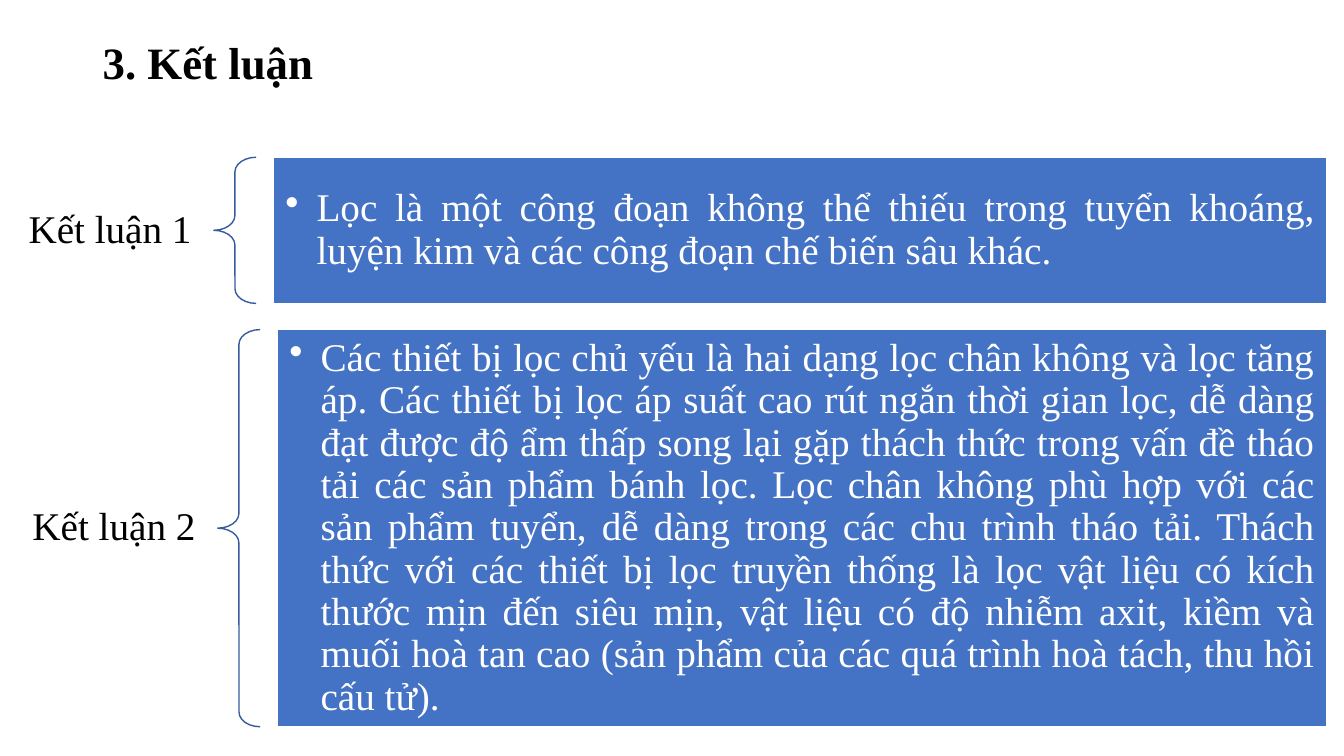
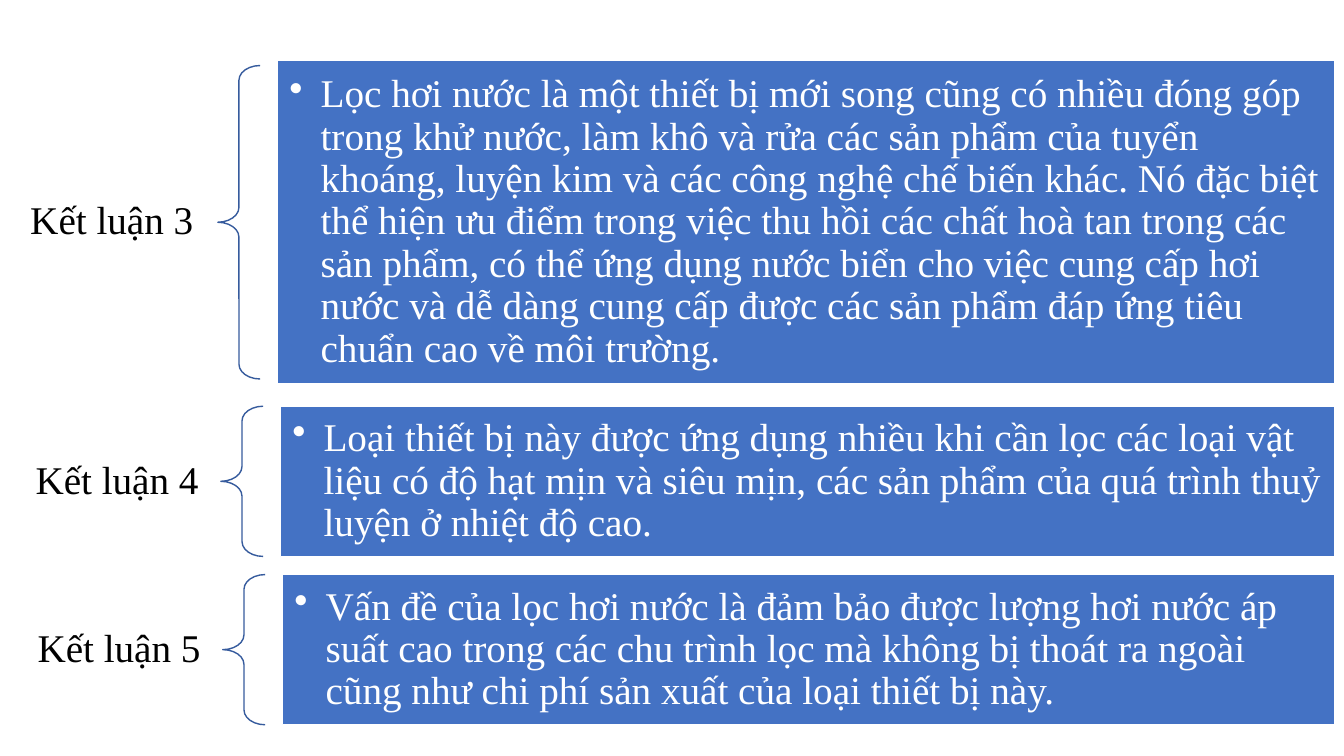
from dataclasses import dataclass
from typing import Optional

from lxml.etree import SubElement
from pptx import Presentation
from pptx.dml.color import RGBColor
from pptx.enum.shapes import MSO_SHAPE
from pptx.enum.text import MSO_ANCHOR, PP_ALIGN
from pptx.oxml.ns import qn
from pptx.util import Inches, Pt


@dataclass(frozen=True)
class Theme:
    font: str = "Times New Roman"
    title_size: int = 32
    body_size: int = 28
    ink: RGBColor = RGBColor(0x00, 0x00, 0x00)
    paper: RGBColor = RGBColor(0xFF, 0xFF, 0xFF)
    panel: RGBColor = RGBColor(0x44, 0x72, 0xC4)
    brace: RGBColor = RGBColor(0x36, 0x5B, 0x9D)
    line_width: float = 1
    line_spacing: float = 0.9


@dataclass(frozen=True)
class Conclusion:
    number: int
    text: str
    brace_left: float
    top: float
    height: float
    label_height: float
    brace_inset: float = 0
    label_align: PP_ALIGN = PP_ALIGN.RIGHT


@dataclass(frozen=True)
class Page:
    conclusions: tuple[Conclusion, ...]
    label_left: float
    panel_right: float
    panel_align: PP_ALIGN
    title: Optional[str] = None


THEME = Theme()
BRACE_WIDTH = 0.42
BRACE_TO_PANEL = 0.59
BULLET_INDENT = 0.31

PAGES = (
    Page(
        title="3. Kết luận",
        label_left=0,
        panel_right=13.16,
        panel_align=PP_ALIGN.JUSTIFY,
        conclusions=(
            Conclusion(
                1,
                "Lọc là một công đoạn không thể thiếu trong tuyển khoáng, luyện kim "
                "và các công đoạn chế biến sâu khác.",
                2.12, 1.56, 1.45, 1.41,
            ),
            Conclusion(
                2,
                "Các thiết bị lọc chủ yếu là hai dạng lọc chân không và lọc tăng áp. "
                "Các thiết bị lọc áp suất cao rút ngắn thời gian lọc, dễ dàng đạt được "
                "độ ẩm thấp song lại gặp thách thức trong vấn đề tháo tải các sản phẩm "
                "bánh lọc. Lọc chân không phù hợp với các sản phẩm tuyển, dễ dàng trong "
                "các chu trình tháo tải. Thách thức với các thiết bị lọc truyền thống là "
                "lọc vật liệu có kích thước mịn đến siêu mịn, vật liệu có độ nhiễm axit, "
                "kiềm và muối hoà tan cao (sản phẩm của các quá trình hoà tách, thu hồi "
                "cấu tử).",
                2.16, 3.27, 3.94, 1.41,
            ),
        ),
    ),
    Page(
        label_left=0.08,
        panel_right=13.24,
        panel_align=PP_ALIGN.LEFT,
        conclusions=(
            Conclusion(
                3,
                "Lọc hơi nước là một thiết bị mới song cũng có nhiều đóng góp trong khử "
                "nước, làm khô và rửa các sản phẩm của tuyển khoáng, luyện kim và các "
                "công nghệ chế biến khác. Nó đặc biệt thể hiện ưu điểm trong việc thu hồi "
                "các chất hoà tan trong các sản phẩm, có thể ứng dụng nước biển cho việc "
                "cung cấp hơi nước và dễ dàng cung cấp được các sản phẩm đáp ứng tiêu "
                "chuẩn cao về môi trường.",
                2.16, 0.6, 3.21, 3.3, brace_inset=0.05, label_align=PP_ALIGN.JUSTIFY,
            ),
            Conclusion(
                4,
                "Loại thiết bị này được ứng dụng nhiều khi cần lọc các loại vật liệu có "
                "độ hạt mịn và siêu mịn, các sản phẩm của quá trình thuỷ luyện ở nhiệt "
                "độ cao.",
                2.19, 4.03, 1.49, 0.97,
            ),
            Conclusion(
                5,
                "Vấn đề của lọc hơi nước là đảm bảo được lượng hơi nước áp suất cao trong "
                "các chu trình lọc mà không bị thoát ra ngoài cũng như chi phí sản xuất "
                "của loại thiết bị này.",
                2.21, 5.7, 1.49, 0.97,
            ),
        ),
    ),
)


def add_bullet(para) -> None:
    properties = para._p.get_or_add_pPr()
    properties.set("marL", str(Inches(BULLET_INDENT)))
    properties.set("indent", str(-Inches(BULLET_INDENT)))
    SubElement(properties, qn("a:buChar")).set("char", "•")


def write_text(
    box,
    text: str,
    *,
    size: int = THEME.body_size,
    color: RGBColor = THEME.ink,
    bold: bool = False,
    align: PP_ALIGN = PP_ALIGN.LEFT,
    margins: tuple[float, float] = (0.1, 0.05),
    bullet: bool = False,
) -> None:
    frame = box.text_frame
    frame.word_wrap = True
    frame.vertical_anchor = MSO_ANCHOR.MIDDLE
    frame.margin_left = frame.margin_right = Inches(margins[0])
    frame.margin_top = frame.margin_bottom = Inches(margins[1])
    para = frame.paragraphs[0]
    para.alignment = align
    para.line_spacing = THEME.line_spacing
    if bullet:
        para.level = 1
        add_bullet(para)
    span = para.add_run()
    span.text = text
    span.font.name = THEME.font
    span.font.size = Pt(size)
    span.font.bold = bold
    span.font.color.rgb = color


def add_text_box(slide, left: float, top: float, width: float, height: float):
    return slide.shapes.add_textbox(Inches(left), Inches(top), Inches(width), Inches(height))


def add_outlined_shape(
    slide,
    kind: MSO_SHAPE,
    left: float,
    top: float,
    width: float,
    height: float,
    line: RGBColor,
    fill: Optional[RGBColor] = None,
):
    shape = slide.shapes.add_shape(
        kind, Inches(left), Inches(top), Inches(width), Inches(height)
    )
    shape.shadow.inherit = False
    shape.line.color.rgb = line
    shape.line.width = Pt(THEME.line_width)
    if fill is None:
        shape.fill.background()
    else:
        shape.fill.solid()
        shape.fill.fore_color.rgb = fill
    return shape


def draw_conclusion(slide, page: Page, item: Conclusion) -> None:
    label_top = item.top + (item.height - item.label_height) / 2
    label = add_text_box(
        slide, page.label_left, label_top,
        item.brace_left - page.label_left, item.label_height,
    )
    write_text(
        label, f"Kết luận {item.number}", align=item.label_align, margins=(0.22, 0.08)
    )

    brace = add_outlined_shape(
        slide, MSO_SHAPE.LEFT_BRACE, item.brace_left, item.top + item.brace_inset,
        BRACE_WIDTH, item.height - 2 * item.brace_inset, THEME.brace,
    )
    brace.adjustments[0] = 0.35
    brace.adjustments[1] = 0.5

    panel_left = item.brace_left + BRACE_TO_PANEL
    panel = add_outlined_shape(
        slide, MSO_SHAPE.RECTANGLE, panel_left, item.top,
        page.panel_right - panel_left, item.height, THEME.paper, THEME.panel,
    )
    write_text(
        panel, item.text, color=THEME.paper, align=page.panel_align,
        margins=(0.12, 0.12), bullet=True,
    )


def draw_page(deck, page: Page) -> None:
    slide = deck.slides.add_slide(deck.slide_layouts[6])
    for item in page.conclusions:
        draw_conclusion(slide, page, item)
    if page.title:
        title = add_text_box(slide, 0.92, 0.4, 11.5, 0.48)
        write_text(title, page.title, size=THEME.title_size, bold=True)


def main() -> None:
    deck = Presentation()
    deck.slide_width = Inches(13.33)
    deck.slide_height = Inches(7.5)
    for page in PAGES:
        draw_page(deck, page)
    deck.save("out.pptx")


if __name__ == "__main__":
    main()
